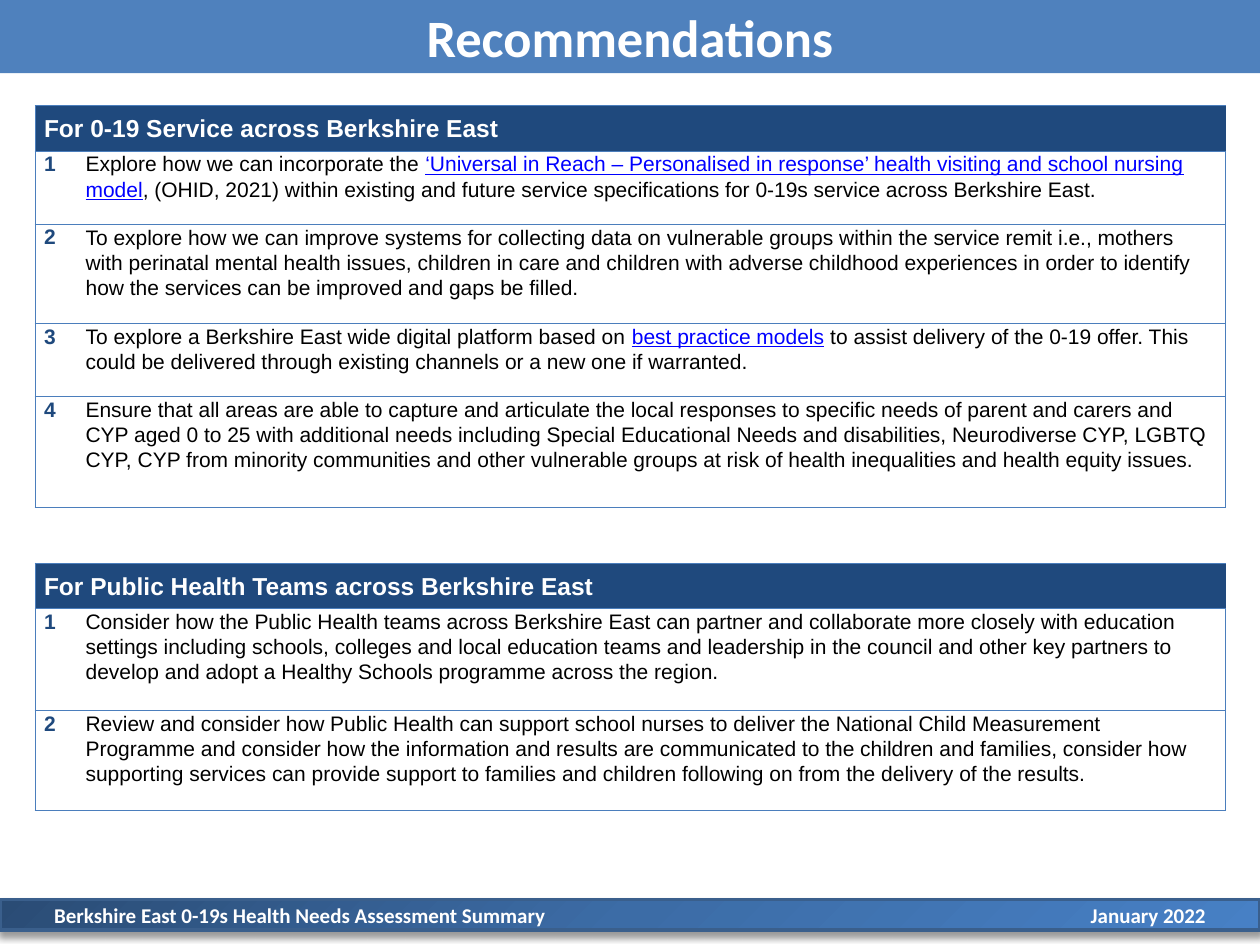
from copy import deepcopy

from pptx import Presentation
from pptx.dml.color import RGBColor
from pptx.enum.shapes import MSO_SHAPE
from pptx.enum.text import MSO_ANCHOR, MSO_AUTO_SIZE, PP_ALIGN
from pptx.oxml import parse_xml
from pptx.oxml.ns import nsdecls, qn
from pptx.util import Inches, Pt

RECTANGLE = MSO_SHAPE.RECTANGLE
MIDDLE, TOP = MSO_ANCHOR.MIDDLE, MSO_ANCHOR.TOP
LEFT, CENTER = PP_ALIGN.LEFT, PP_ALIGN.CENTER
NO_AUTOFIT = MSO_AUTO_SIZE.NONE

WHITE = RGBColor(0xFF, 0xFF, 0xFF)
BLACK = RGBColor(0x00, 0x00, 0x00)
BLUE = RGBColor(0x4F, 0x81, 0xBD)
NAVY = RGBColor(0x1F, 0x49, 0x7D)
LINK_BLUE = RGBColor(0x00, 0x00, 0xFF)
BORDER_BLUE = RGBColor(0x4B, 0x7E, 0xBC)
FOOTER_LINE = RGBColor(0x3A, 0x5F, 0x8C)
FOOTER_GRADIENT = [
    (0, RGBColor(0x2A, 0x4C, 0x75)),
    (0.5, RGBColor(0x3C, 0x6C, 0xA6)),
    (1, RGBColor(0x47, 0x80, 0xC5)),
]

SERVICE_ITEMS = [
    (0.58, ["Explore how we can incorporate the ",
            "‘Universal in Reach – Personalised in response’ health visiting and school nursing model",
            ", (OHID, 2021) within existing and future service specifications for 0-19s service "
            "across Berkshire East."]),
    (0.79, ["To explore how we can improve systems for collecting data on vulnerable groups within "
            "the service remit i.e., mothers with perinatal mental health issues, children in care "
            "and children with adverse childhood experiences in order to identify how the services "
            "can be improved and gaps be filled."]),
    (0.58, ["To explore a Berkshire East wide digital platform based on ",
            "best practice models",
            " to assist delivery of the 0-19 offer. This could be delivered through existing "
            "channels or a new one if warranted."]),
    (0.88, ["Ensure that all areas are able to capture and articulate the local responses to "
            "specific needs of parent and carers and CYP aged 0 to 25 with additional needs "
            "including Special Educational Needs and disabilities, Neurodiverse CYP, LGBTQ CYP, "
            "CYP from minority communities and other vulnerable groups at risk of health "
            "inequalities and health equity issues."]),
]
PUBLIC_HEALTH_ITEMS = [
    (0.81, ["Consider how the Public Health teams across Berkshire East can partner and collaborate "
            "more closely with education settings including schools, colleges and local education "
            "teams and leadership in the council and other key partners to develop and adopt a "
            "Healthy Schools programme across the region."]),
    (0.79, ["Review and consider how Public Health can support school nurses to deliver the National "
            "Child Measurement Programme and consider how the information and results are "
            "communicated to the children and families, consider how supporting services can "
            "provide support to families and children following on from the delivery of the "
            "results."]),
]


class SlideBuilder:
    heading_font = "Calibri"
    body_font = "Arial"
    table_left = 0.28
    column_widths = (0.33, 9.12)
    header_height = 0.36

    def __init__(self, slide):
        self.slide = slide

    def format_font(self, font, name, size, color, bold):
        font.name = name
        font.size = Pt(size)
        font.color.rgb = color
        font.bold = bold

    def title(self, text):
        title = self.slide.shapes.title
        title.left, title.top = Inches(0), Inches(0)
        title.width, title.height = Inches(10), Inches(0.58)
        title.fill.solid()
        title.fill.fore_color.rgb = BLUE
        frame = title.text_frame
        frame.text = text
        frame.auto_size = NO_AUTOFIT
        frame.vertical_anchor = MIDDLE
        frame.margin_top = frame.margin_bottom = 0
        paragraph = frame.paragraphs[0]
        paragraph.alignment = CENTER
        self.format_font(paragraph.font, self.heading_font, 30, WHITE, True)

    def footer(self, left_text, right_text):
        shape = self.slide.shapes.add_shape(
            RECTANGLE, Inches(0), Inches(7.14), Inches(10), Inches(0.24))
        shape.fill.gradient()
        shape.fill.gradient_angle = 315
        properties = shape._element.spPr
        stop_list = properties.find(qn("a:gradFill")).find(qn("a:gsLst"))
        stop_list.insert(1, deepcopy(stop_list[0]))
        for stop, (position, color) in zip(shape.fill.gradient_stops, FOOTER_GRADIENT):
            stop.position = position
            stop.color.rgb = color
        shape.line.color.rgb = FOOTER_LINE
        shape.line.width = Pt(2)
        properties.append(parse_xml(
            f'<a:effectLst {nsdecls("a")}><a:outerShdw blurRad="{Pt(4)}" dist="{Pt(3)}" '
            'dir="5400000" rotWithShape="0"><a:srgbClr val="000000"><a:alpha val="40000"/>'
            '</a:srgbClr></a:outerShdw></a:effectLst>'))
        frame = shape.text_frame
        frame.text = f"{left_text}\t{right_text}"
        frame.vertical_anchor = MIDDLE
        frame.margin_left, frame.margin_right = Inches(0.43), Inches(0.2)
        frame.margin_top = frame.margin_bottom = 0
        paragraph = frame.paragraphs[0]
        paragraph.alignment = LEFT
        self.format_font(paragraph.font, self.heading_font, 12, WHITE, True)
        paragraph._p.get_or_add_pPr().insert(0, parse_xml(
            f'<a:tabLst {nsdecls("a")}><a:tab pos="{Inches(9.14)}" algn="r"/></a:tabLst>'))

    def borders(self, cell, hidden_side):
        properties = cell._tc.get_or_add_tcPr()
        for side in "LRTB":
            if side == hidden_side:
                paint = "<a:noFill/>"
            else:
                paint = f'<a:solidFill><a:srgbClr val="{BORDER_BLUE}"/></a:solidFill>'
            properties.append(parse_xml(
                f'<a:ln{side} {nsdecls("a")} w="{Pt(0.75)}">{paint}</a:ln{side}>'))

    def cell(self, cell, texts, size, color, bold, anchor=TOP, spacing=1.06):
        cell.margin_left = cell.margin_right = Inches(0.07)
        cell.margin_top = cell.margin_bottom = 0
        cell.vertical_anchor = anchor
        paragraph = cell.text_frame.paragraphs[0]
        paragraph.line_spacing = spacing
        paragraph.space_after = Pt(8)
        self.format_font(paragraph.font, self.body_font, size, color, bold)
        for index, text in enumerate(texts):
            run = paragraph.add_run()
            run.text = text
            if index % 2:
                run.font.color.rgb = LINK_BLUE
                run.font.underline = True

    def recommendations(self, top, heading, items):
        heights = [self.header_height] + [height for height, _ in items]
        table = self.slide.shapes.add_table(
            len(heights), 2, Inches(self.table_left), Inches(top),
            Inches(sum(self.column_widths)), Inches(sum(heights))).table
        table.first_row = table.horz_banding = False
        for column, width in zip(table.columns, self.column_widths):
            column.width = Inches(width)
        for row, height in zip(table.rows, heights):
            row.height = Inches(height)
            for cell, hidden_side in zip(row.cells, "RL"):
                self.borders(cell, hidden_side)
                cell.fill.background()

        header = table.cell(0, 0)
        header.merge(table.cell(0, 1))
        header.fill.solid()
        header.fill.fore_color.rgb = NAVY
        self.cell(header, [heading], 14, WHITE, True, MIDDLE)
        for number, (_, texts) in enumerate(items, 1):
            self.cell(table.cell(number, 0), [str(number)], 12, NAVY, True)
            self.cell(table.cell(number, 1), texts, 12, BLACK, False, spacing=1.07)


def main():
    presentation = Presentation()
    presentation.slide_width, presentation.slide_height = Inches(10), Inches(7.5)
    builder = SlideBuilder(presentation.slides.add_slide(presentation.slide_layouts[5]))
    builder.footer("Berkshire East 0-19s Health Needs Assessment Summary", "January 2022")
    builder.title("Recommendations")
    builder.recommendations(0.84, "For 0-19 Service across Berkshire East", SERVICE_ITEMS)
    builder.recommendations(
        4.47, "For Public Health Teams across Berkshire East", PUBLIC_HEALTH_ITEMS)
    presentation.save("out.pptx")


if __name__ == "__main__":
    main()
